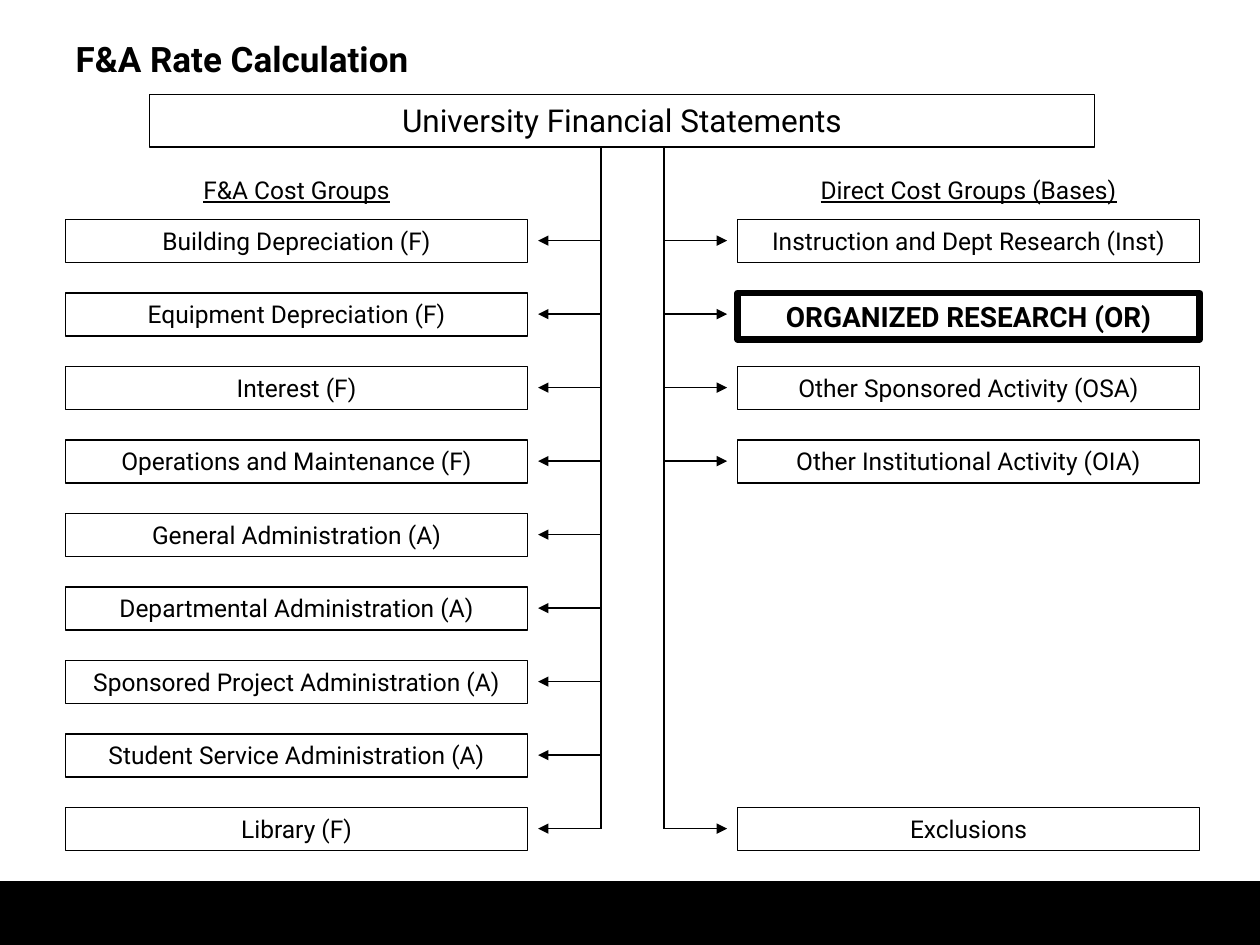
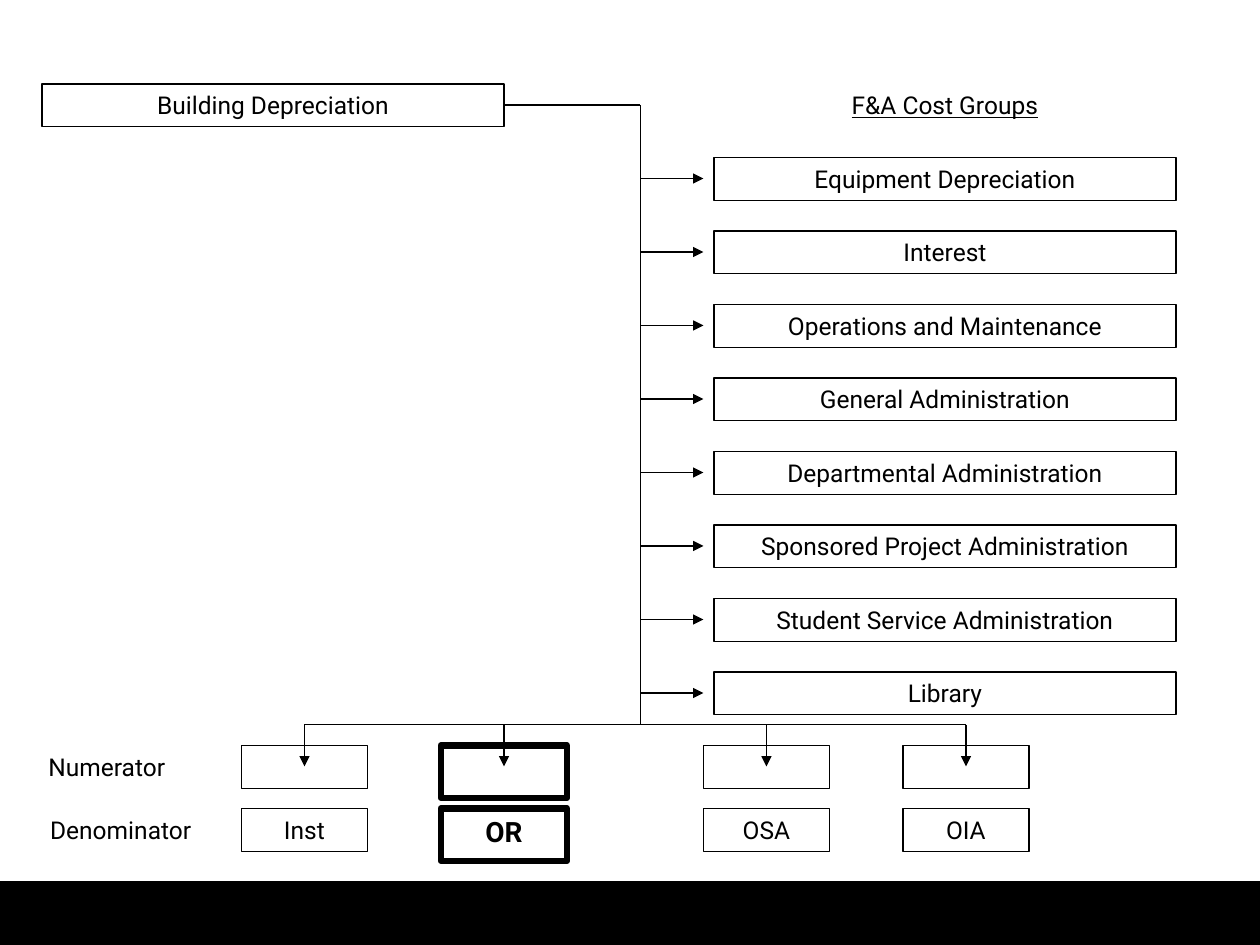
from lxml.etree import SubElement
from pptx import Presentation
from pptx.dml.color import RGBColor
from pptx.enum.shapes import MSO_CONNECTOR as Connector, MSO_SHAPE as Shape
from pptx.enum.text import MSO_ANCHOR as Anchor, MSO_AUTO_SIZE as AutoSize, PP_ALIGN as Align
from pptx.oxml.ns import qn
from pptx.util import Pt

BLACK = "000000"
FONT = "Roboto"
SIZE, STRONG_SIZE = 14, 16
THIN, THICK = 0.75, 3.75
BOX_WIDTH, BOX_HEIGHT = 264, 24.5
ROW_PITCH = 42
ARROW_LENGTH, ARROW_DROP = 36, 12  # the drop runs from the top of a box to its arrow

COST_GROUPS = [
    ("Building Depreciation", "F"),
    ("Equipment Depreciation", "F"),
    ("Interest", "F"),
    ("Operations and Maintenance", "F"),
    ("General Administration", "A"),
    ("Departmental Administration", "A"),
    ("Sponsored Project Administration", "A"),
    ("Student Service Administration", "A"),
    ("Library", "F"),
]
DIRECT_ROWS = {
    0: "Instruction and Dept Research (Inst)",
    1: "ORGANIZED RESEARCH (OR)",
    2: "Other Sponsored Activity (OSA)",
    3: "Other Institutional Activity (OIA)",
    8: "Exclusions",
}
BASES = [("Inst", 138), ("OR", 252), ("OSA", 402), ("OIA", 516)]


def color(hex_string):
    return RGBColor.from_string(hex_string)


def write(shape, text, size=SIZE, align=Align.CENTER, bold=False, underline=False):
    frame = shape.text_frame
    frame.word_wrap = True
    frame.auto_size = AutoSize.NONE
    frame.vertical_anchor = Anchor.TOP
    para = frame.paragraphs[0]
    para.text = text
    para.alignment = align
    font = para.font
    font.name, font.size = FONT, Pt(size)
    font.bold, font.underline = bold, underline
    font.color.rgb = color(BLACK)


def add_box(page, text, left, top, width=BOX_WIDTH, height=BOX_HEIGHT, size=SIZE, strong=False):
    """Add an outlined box; a strong one has a thick line and bold text."""
    box = page.shapes.add_shape(Shape.RECTANGLE, Pt(left), Pt(top), Pt(width), Pt(height))
    box.shadow.inherit = False
    box.fill.background()
    box.line.color.rgb = color(BLACK)
    box.line.width = Pt(THICK if strong else THIN)
    if text:
        write(box, text, STRONG_SIZE if strong else size, bold=strong)


def add_label(page, text, left, top, width=BOX_WIDTH, underline=False):
    label = page.shapes.add_textbox(Pt(left), Pt(top), Pt(width), Pt(24))
    write(label, text, underline=underline)


def add_line(page, x1, y1, x2, y2, arrow=False):
    line = page.shapes.add_connector(Connector.STRAIGHT, Pt(x1), Pt(y1), Pt(x2), Pt(y2))
    line.line.color.rgb = color(BLACK)
    line.line.width = Pt(THIN)
    if arrow:
        SubElement(line.line._get_or_add_ln(), qn("a:tailEnd"), type="triangle")
    SubElement(line.element.spPr, qn("a:effectLst"))


def add_title(page, text):
    title = page.shapes.title
    title.left, title.top, title.width, title.height = Pt(36), Pt(18), Pt(540), Pt(31.5)
    write(title, text, 20, Align.LEFT, bold=True)


def add_master_band(deck, page):
    """Draw the bottom band on a page, then move it to the master behind all slides."""
    band = page.shapes.add_shape(Shape.RECTANGLE, 0, Pt(503.5), Pt(720), Pt(36.5))
    band.shadow.inherit = False
    band.fill.solid()
    band.fill.fore_color.rgb = color(BLACK)
    band.line.fill.background()
    deck.slide_master.element.cSld.spTree.insert(2, band.element)


def build_statements(page):
    first_top, statements_bottom = 125.5, 84
    left_column, right_column = 37.5, 421.5
    left_trunk, right_trunk = 343.5, 379.5
    last_arrow = first_top + 8 * ROW_PITCH + ARROW_DROP

    add_title(page, "F&A Rate Calculation")
    add_box(page, "University Financial Statements", 85.5, 54, 540, 30, size=18)
    add_label(page, "F&A Cost Groups", left_column, 96.5, underline=True)
    add_label(page, "Direct Cost Groups (Bases)", right_column, 96.5, underline=True)
    for trunk in (left_trunk, right_trunk):
        add_line(page, trunk, statements_bottom, trunk, last_arrow)

    for row, (name, kind) in enumerate(COST_GROUPS):
        top = first_top + row * ROW_PITCH
        arrow_y = top + ARROW_DROP
        add_box(page, f"{name} ({kind})", left_column, top)
        add_line(page, left_trunk, arrow_y, left_trunk - ARROW_LENGTH, arrow_y, arrow=True)
        if row in DIRECT_ROWS:
            strong = row == 1
            add_box(page, DIRECT_ROWS[row], right_column, top,
                    height=26.5 if strong else BOX_HEIGHT, strong=strong)
            add_line(page, right_trunk, arrow_y, right_trunk + ARROW_LENGTH, arrow_y, arrow=True)


def build_allocation(page):
    """Show building depreciation spread over the other cost groups and the bases."""
    source_left, column, top = 24, 408, 48
    trunk, branch_y = 366, 414
    numerator_top, denominator_top = 426, 462
    base_width = 72

    names = [name for name, _ in COST_GROUPS]
    add_box(page, names[0], source_left, top)
    add_label(page, "F&A Cost Groups", column, top, underline=True)
    add_line(page, source_left + BOX_WIDTH, top + ARROW_DROP, trunk, top + ARROW_DROP)
    add_line(page, trunk, top + ARROW_DROP, trunk, branch_y)
    for row, name in enumerate(names[1:], start=1):
        box_top = top + row * ROW_PITCH
        add_box(page, name, column, box_top)
        add_line(page, trunk, box_top + ARROW_DROP,
                 trunk + ARROW_LENGTH, box_top + ARROW_DROP, arrow=True)

    centers = [left + base_width / 2 for _, left in BASES]
    add_line(page, centers[0], branch_y, centers[-1], branch_y)
    for (base, left), center in zip(BASES, centers):
        strong = base == "OR"
        height = 30 if strong else BOX_HEIGHT
        add_box(page, "", left, numerator_top, base_width, height, strong=strong)
        add_box(page, base, left, denominator_top, base_width, height, strong=strong)
        add_line(page, center, branch_y, center, numerator_top + ARROW_DROP, arrow=True)
    add_label(page, "Numerator", 16, numerator_top, 90)
    add_label(page, "Denominator", 12, denominator_top, 114)


def main():
    deck = Presentation()
    deck.slide_width, deck.slide_height = Pt(720), Pt(540)
    title_only, blank = deck.slide_layouts[5], deck.slide_layouts[6]
    statements = deck.slides.add_slide(title_only)
    add_master_band(deck, statements)
    build_statements(statements)
    build_allocation(deck.slides.add_slide(blank))
    deck.save("out.pptx")


if __name__ == "__main__":
    main()
